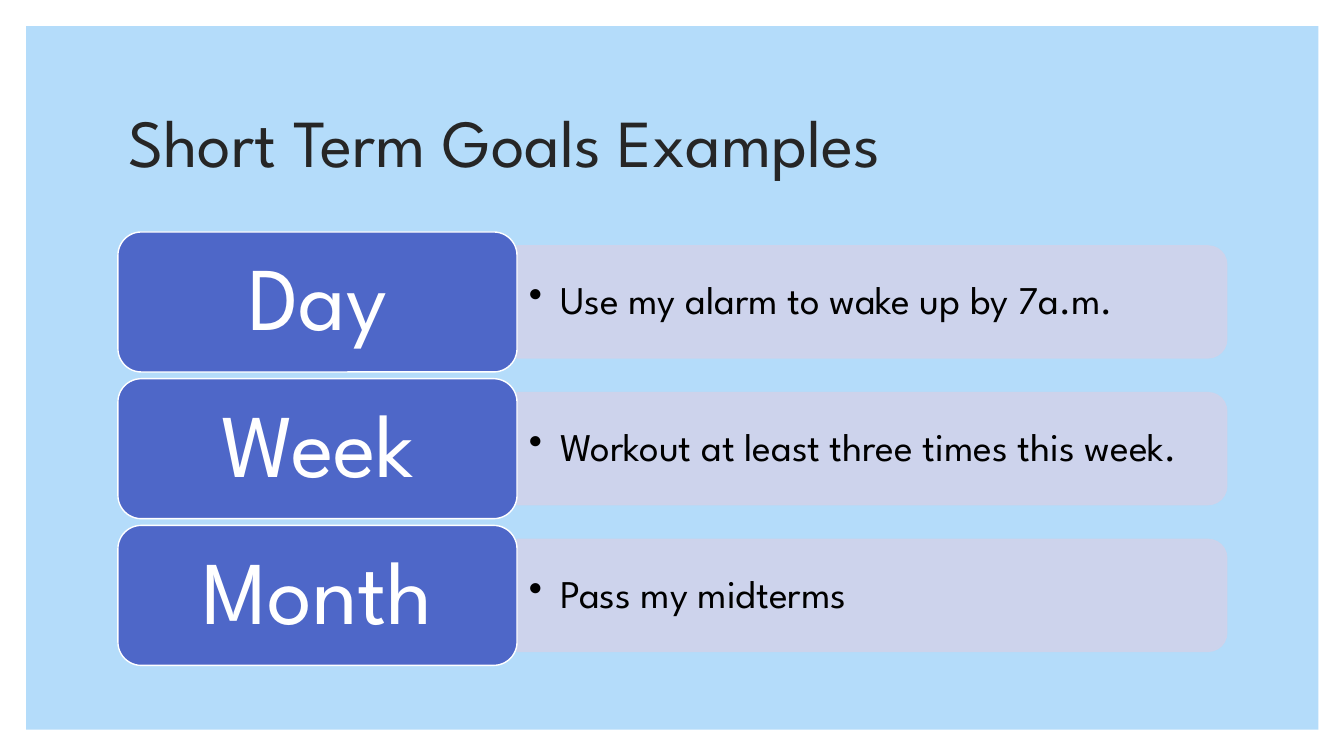
from pptx import Presentation
from pptx.dml.color import RGBColor
from pptx.enum.shapes import MSO_SHAPE
from pptx.enum.text import MSO_ANCHOR, MSO_AUTO_SIZE, PP_ALIGN
from pptx.oxml.ns import qn
from pptx.util import Pt
from lxml.etree import SubElement

GOALS = [
    ("Day", "Use my alarm to wake up by 7a.m."),
    ("Week", "Workout at least three times this week."),
    ("Month", "Pass my midterms"),
]

# Row geometry in points
LABEL_LEFT, LABEL_WIDTH, LABEL_HEIGHT = 84.24, 285.12, 100
FIRST_TOP, ROW_PITCH = 165.7, 104.8
BAR_LEFT, BAR_WIDTH, BAR_HEIGHT = 369.36, 506.9, 80
GOAL_WIDTH, GOAL_HEIGHT = 503.3, 72


def rgb(value):
    return RGBColor.from_string(value)


def set_all(target, values):
    for name, value in values.items():
        setattr(target, name, value)


class GoalSlide:
    FONT = "League Spartan"
    PANEL, LABEL, BAR = "B4DCFA", "4E67C8", "D0D3EB"
    TITLE_TEXT, GOAL_TEXT, WHITE = "262626", "000000", "FFFFFF"

    def __init__(self, deck):
        self.slide = deck.slides.add_slide(deck.slide_layouts[5])

    def fill_text(self, shape, text, size, color, align, margins=(7.2, 3.6)):
        frame = shape.text_frame
        across, down = (Pt(margin) for margin in margins)
        set_all(frame, {
            "text": text, "word_wrap": True,
            "auto_size": MSO_AUTO_SIZE.NONE,
            "vertical_anchor": MSO_ANCHOR.MIDDLE,
            "margin_left": across, "margin_right": across,
            "margin_top": down, "margin_bottom": down,
        })
        paragraph = frame.paragraphs[0]
        set_all(paragraph, {"alignment": align, "line_spacing": 0.9})
        font = paragraph.runs[0].font
        set_all(font, {"name": self.FONT, "size": Pt(size)})
        font.color.rgb = rgb(color)
        return paragraph

    def block(self, kind, box, fill, line=None):
        shape = self.slide.shapes.add_shape(kind, *map(Pt, box))
        shape.shadow.inherit = False
        shape.fill.solid()
        shape.fill.fore_color.rgb = rgb(fill)
        if line:
            shape.line.color.rgb = rgb(line)
            shape.line.width = Pt(1)
        else:
            shape.line.fill.background()
        return shape

    def panel(self, box):
        panel = self.block(MSO_SHAPE.RECTANGLE, box, self.PANEL)
        # Send behind the title
        panel._element.getparent().insert(2, panel._element)

    def title(self, text, box):
        title = self.slide.shapes.title
        set_all(title, dict(zip(("left", "top", "width", "height"), map(Pt, box))))
        self.fill_text(title, text, 48, self.TITLE_TEXT, PP_ALIGN.LEFT)

    def bar(self, middle):
        # Upright shape turned a quarter, so its rounded top faces right
        center = BAR_LEFT + BAR_WIDTH / 2
        box = (center - BAR_HEIGHT / 2, middle - BAR_WIDTH / 2, BAR_HEIGHT, BAR_WIDTH)
        bar = self.block(MSO_SHAPE.ROUND_2_SAME_RECTANGLE, box, self.BAR, self.BAR)
        bar.rotation = 90
        for color in bar._element.spPr.iter(qn("a:srgbClr")):
            SubElement(color, qn("a:alpha"), val="90000")

    def goal(self, text, middle):
        box = (BAR_LEFT, middle - GOAL_HEIGHT / 2, GOAL_WIDTH, GOAL_HEIGHT)
        goal = self.slide.shapes.add_textbox(*map(Pt, box))
        paragraph = self.fill_text(goal, text, 28, self.GOAL_TEXT, PP_ALIGN.LEFT, (8.4, 4.2))
        # Bullet with hanging indent
        properties = paragraph._p.get_or_add_pPr()
        properties.set("marL", str(Pt(22.5)))
        properties.set("indent", str(-Pt(22.5)))
        SubElement(properties, qn("a:buChar"), char="•")

    def label(self, text, top):
        box = (LABEL_LEFT, top, LABEL_WIDTH, LABEL_HEIGHT)
        label = self.block(MSO_SHAPE.ROUNDED_RECTANGLE, box, self.LABEL, self.WHITE)
        self.fill_text(label, text, 64, self.WHITE, PP_ALIGN.CENTER, (19.2, 9.6))


def main():
    deck = Presentation()
    set_all(deck, {"slide_width": Pt(960), "slide_height": Pt(540)})
    page = GoalSlide(deck)

    # Backdrop and title
    page.panel((18.72, 18.72, 923, 502.5))
    page.title("Short Term Goals Examples", (84.24, 50.4, 792, 108))

    # One row per time span
    for row, (span, goal) in enumerate(GOALS):
        top = FIRST_TOP + row * ROW_PITCH
        middle = top + LABEL_HEIGHT / 2
        page.bar(middle)
        page.goal(goal, middle)
        page.label(span, top)

    deck.save("out.pptx")


if __name__ == "__main__":
    main()
